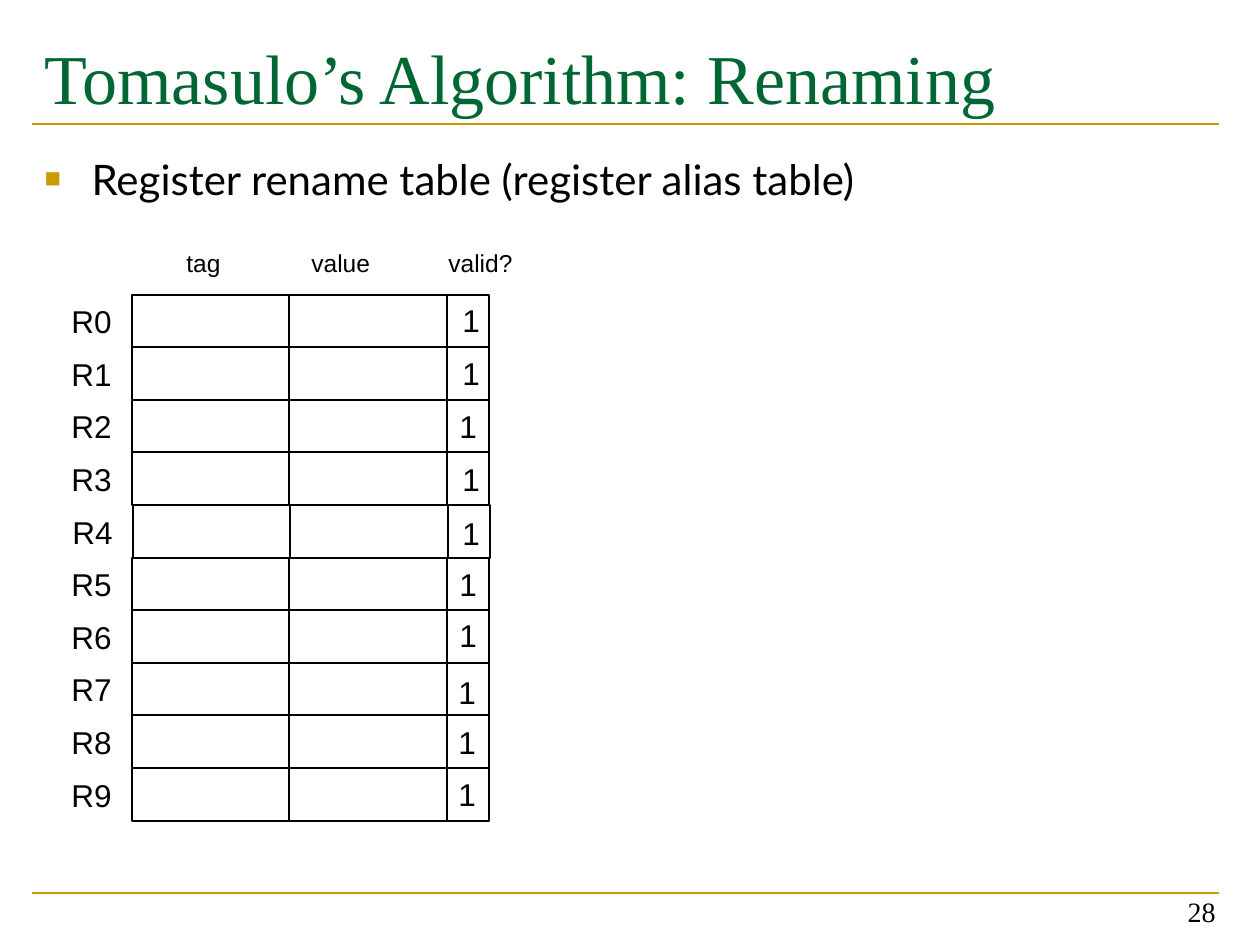
from lxml.etree import SubElement
from pptx import Presentation
from pptx.dml.color import RGBColor
from pptx.enum.shapes import MSO_CONNECTOR, MSO_SHAPE
from pptx.enum.text import MSO_ANCHOR, MSO_AUTO_SIZE, PP_ALIGN
from pptx.oxml.ns import qn
from pptx.util import Pt

PIXEL = 914400 // 126
BLACK = RGBColor(0x00, 0x00, 0x00)
GREEN = RGBColor(0x00, 0x66, 0x33)
GOLD = RGBColor(0xCC, 0x99, 0x00)

REGISTER_COUNT = 10
COLUMNS = ((0, 157), (157, 158), (315, 42))
HEADERS = (("tag", 42, 59), ("value", 167, 84), ("valid?", 304, 89))
VALID_OFFSETS = (
    (318, 0), (318, 1), (315, 1), (318, 2), (318, 3),
    (315, 1), (315, 0), (314, 4), (314, 2), (314, 1),
)


def px(*lengths):
    return [length * PIXEL for length in lengths]


def format_text(frame, text, size, font="Arial", color=BLACK,
                align=PP_ALIGN.LEFT, anchor=MSO_ANCHOR.TOP, wrap=True):
    frame.auto_size = MSO_AUTO_SIZE.NONE
    frame.word_wrap = wrap
    frame.vertical_anchor = anchor
    paragraph = frame.paragraphs[0]
    paragraph.alignment = align
    run = paragraph.add_run()
    run.text = text
    run.font.size = Pt(size)
    run.font.name = font
    run.font.color.rgb = color
    return paragraph


def add_text(slide, box, text, size, **formatting):
    shape = slide.shapes.add_textbox(*px(*box))
    format_text(shape.text_frame, text, size, **formatting)


def place(shape, box):
    shape.left, shape.top, shape.width, shape.height = px(*box)


def add_rule(slide, left, top, width):
    line = slide.shapes.add_connector(
        MSO_CONNECTOR.STRAIGHT, *px(left, top, left + width, top))
    line.line.color.rgb = GOLD
    line.line.width = Pt(1.5)
    SubElement(line._element.spPr, qn("a:effectLst"))


def add_cell(slide, box):
    cell = slide.shapes.add_shape(MSO_SHAPE.RECTANGLE, *px(*box))
    cell.shadow.inherit = False
    cell.fill.background()
    cell.line.color.rgb = BLACK
    cell.line.width = Pt(0.75)


def build_title(slide, box):
    title = slide.shapes.title
    place(title, box)
    title.text_frame.margin_top = 14 * PIXEL
    format_text(title.text_frame, "Tomasulo’s Algorithm: Renaming", 40,
                font="Times New Roman", color=GREEN)


def build_body(slide, box):
    body = slide.placeholders[1]
    place(body, box)
    paragraph = format_text(
        body.text_frame, "Register rename table (register alias table)", 24, font="Lato")
    properties = paragraph._p.get_or_add_pPr()
    properties.set("marL", str(47 * PIXEL))
    properties.set("indent", str(-47 * PIXEL))
    bullet_color = SubElement(properties, qn("a:buClr"))
    SubElement(bullet_color, qn("a:srgbClr"), val=str(GOLD))
    SubElement(properties, qn("a:buSzPct"), val="65000")
    SubElement(properties, qn("a:buFont"), typeface="Arial")
    SubElement(properties, qn("a:buChar"), char="■")


def build_rename_table(slide, box):
    left, top, width, height = box
    for header, offset, header_width in HEADERS:
        add_text(slide, (left + offset, top - 53, header_width, 43), header, 14, wrap=False)
    for register, (valid_left, valid_top) in enumerate(VALID_OFFSETS[:REGISTER_COUNT]):
        row_top = top + register * height // REGISTER_COUNT
        row_height = top + (register + 1) * height // REGISTER_COUNT - row_top
        nudge = 1 if register == 4 else 0
        add_text(slide, (left - 73 + nudge, row_top, 73, row_height), f"R{register}", 18,
                 anchor=MSO_ANCHOR.MIDDLE, wrap=False)
        for offset, column_width in COLUMNS:
            add_cell(slide, (left + offset + nudge, row_top, column_width, row_height))
        add_text(slide, (left + valid_left, row_top + valid_top, 43, 50), "1", 18, wrap=False)


def build_footer(slide, box):
    left, top, width, height = box
    add_rule(slide, left, top, width)
    add_text(slide, (left + 902, top - 22, 294, 63), "28", 16, font="Times New Roman",
             align=PP_ALIGN.RIGHT, anchor=MSO_ANCHOR.BOTTOM)


def main():
    presentation = Presentation()
    presentation.slide_width, presentation.slide_height = px(1260, 945)
    slide = presentation.slides.add_slide(presentation.slide_layouts[1])
    add_rule(slide, 32, 124, 1187)
    build_body(slide, (32, 147, 1187, 736))
    build_title(slide, (32, 21, 1187, 147))
    build_rename_table(slide, (132, 295, 357, 526))
    build_footer(slide, (32, 893, 1187, 41))
    presentation.save("out.pptx")


if __name__ == "__main__":
    main()
